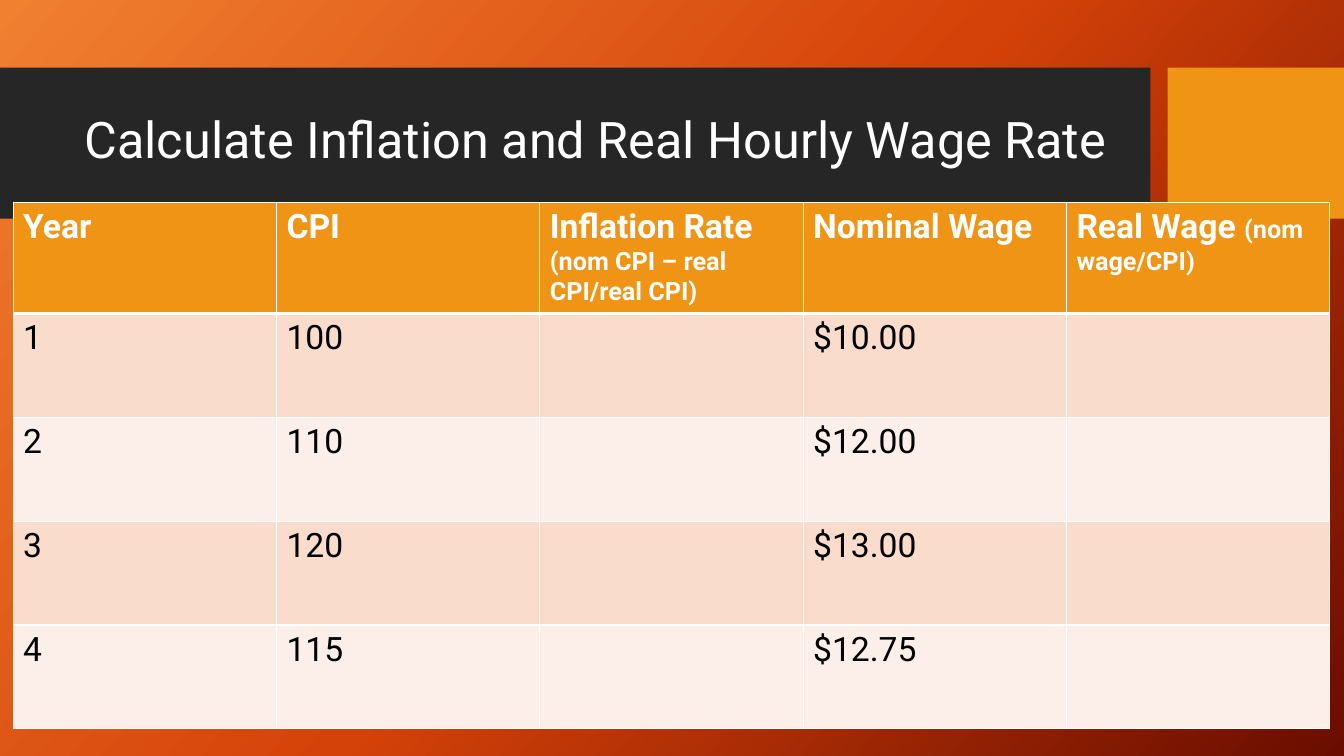
from copy import deepcopy
from dataclasses import dataclass

from lxml.etree import SubElement
from pptx import Presentation
from pptx.dml.color import RGBColor
from pptx.enum.shapes import MSO_SHAPE
from pptx.enum.text import MSO_ANCHOR
from pptx.oxml.ns import qn
from pptx.util import Inches, Pt


@dataclass(frozen=True)
class Theme:
    font: str = "Roboto"
    white: str = "FFFFFF"
    black: str = "000000"
    dark: str = "262626"
    accent: str = "F09415"
    bands: tuple = ("F9DCCC", "FCEEE8")
    gradient: tuple = ((0, "F18031"), (0.5, "D54209"), (1, "6A0D00"))
    gradient_angle: int = 42
    title_size: int = 36
    table_size: int = 24
    note_size: int = 18


class WageSlide:
    def __init__(self, prs, theme):
        self.theme = theme
        self.s = prs.slides.add_slide(prs.slide_layouts[6])

    def background(self):
        fill = self.s.background.fill
        fill.gradient()
        fill.gradient_angle = 360 - self.theme.gradient_angle
        # The default gradient has two stops; add a middle one
        first = self.s.element.find(".//" + qn("a:gs"))
        first.addnext(deepcopy(first))
        for stop, (position, color) in zip(fill.gradient_stops, self.theme.gradient):
            stop.position = position
            stop.color.rgb = RGBColor.from_string(color)

    def block(self, left, top, width, height, color):
        sp = self.s.shapes.add_shape(MSO_SHAPE.RECTANGLE, Inches(left), Inches(top),
                                     Inches(width), Inches(height))
        sp.shadow.inherit = False
        sp.fill.solid()
        sp.fill.fore_color.rgb = RGBColor.from_string(color)
        sp.line.fill.background()

    def run(self, p, text, size, color, bold=False):
        r = p.add_run()
        r.text = text
        r.font.name = self.theme.font
        r.font.size = Pt(size)
        r.font.bold = bold
        r.font.color.rgb = RGBColor.from_string(color)

    def title(self, text, left, top, width, height):
        sp = self.s.shapes.add_textbox(Inches(left), Inches(top),
                                       Inches(width), Inches(height))
        tf = sp.text_frame
        tf.word_wrap = True
        tf.vertical_anchor = MSO_ANCHOR.MIDDLE
        p = tf.paragraphs[0]
        p.line_spacing = 0.9
        self.run(p, text, self.theme.title_size, self.theme.white)

    def borders(self, cell, top, bottom):
        tc_pr = cell._tc.get_or_add_tcPr()
        widths = {"a:lnL": 1, "a:lnR": 1, "a:lnT": top, "a:lnB": bottom}
        for i, (tag, width) in enumerate(widths.items()):
            ln = SubElement(tc_pr, qn(tag), w=str(Pt(width)))
            fill = SubElement(ln, qn("a:solidFill"))
            SubElement(fill, qn("a:srgbClr"), val=self.theme.white)
            tc_pr.insert(i, ln)  # borders come before the fill

    def table(self, header, rows, left, top, width, header_height, row_height):
        t = self.theme
        height = header_height + row_height * len(rows)
        table = self.s.shapes.add_table(len(rows) + 1, len(header), Inches(left), Inches(top),
                                        Inches(width), Inches(height)).table
        table.horz_banding = False
        for i, row in enumerate([header, *rows]):
            is_header = i == 0
            table.rows[i].height = Inches(header_height if is_header else row_height)
            color = t.white if is_header else t.black
            for j, texts in enumerate(row):
                cell = table.cell(i, j)
                cell.fill.solid()
                cell.fill.fore_color.rgb = RGBColor.from_string(
                    t.accent if is_header else t.bands[(i - 1) % 2])
                self.borders(cell, 3 if i == 1 else 1, 3 if is_header else 1)
                # Each cell holds a main text and, in the header, a smaller note
                for text, size in zip(texts, (t.table_size, t.note_size)):
                    self.run(cell.text_frame.paragraphs[0], text, size, color, is_header)


HEADER = [
    ("Year",),
    ("CPI",),
    ("Inflation Rate ", "(nom CPI – real CPI/real CPI)"),
    ("Nominal Wage",),
    ("Real Wage ", "(nom wage/CPI)"),
]
WAGES = [
    ("1", "100", "$10.00"),
    ("2", "110", "$12.00"),
    ("3", "120", "$13.00"),
    ("4", "115", "$12.75"),
]


def main():
    prs = Presentation()
    prs.slide_width = Inches(13.33)
    prs.slide_height = Inches(7.5)
    theme = Theme()
    slide = WageSlide(prs, theme)

    # Background and title band
    slide.background()
    slide.block(0, 0.67, 11.41, 1.5, theme.dark)
    slide.block(11.58, 0.67, 1.75, 1.5, theme.accent)
    slide.title("Calculate Inflation and Real Hourly Wage Rate", 0.74, 0.82, 10.51, 1.18)

    # Worksheet table: the two calculated columns stay empty
    rows = [[(year,), (cpi,), (), (wage,), ()] for year, cpi, wage in WAGES]
    slide.table(HEADER, rows, 0.13, 2.01, 13.06, 1.07, 1.03)

    prs.save("out.pptx")


if __name__ == "__main__":
    main()
